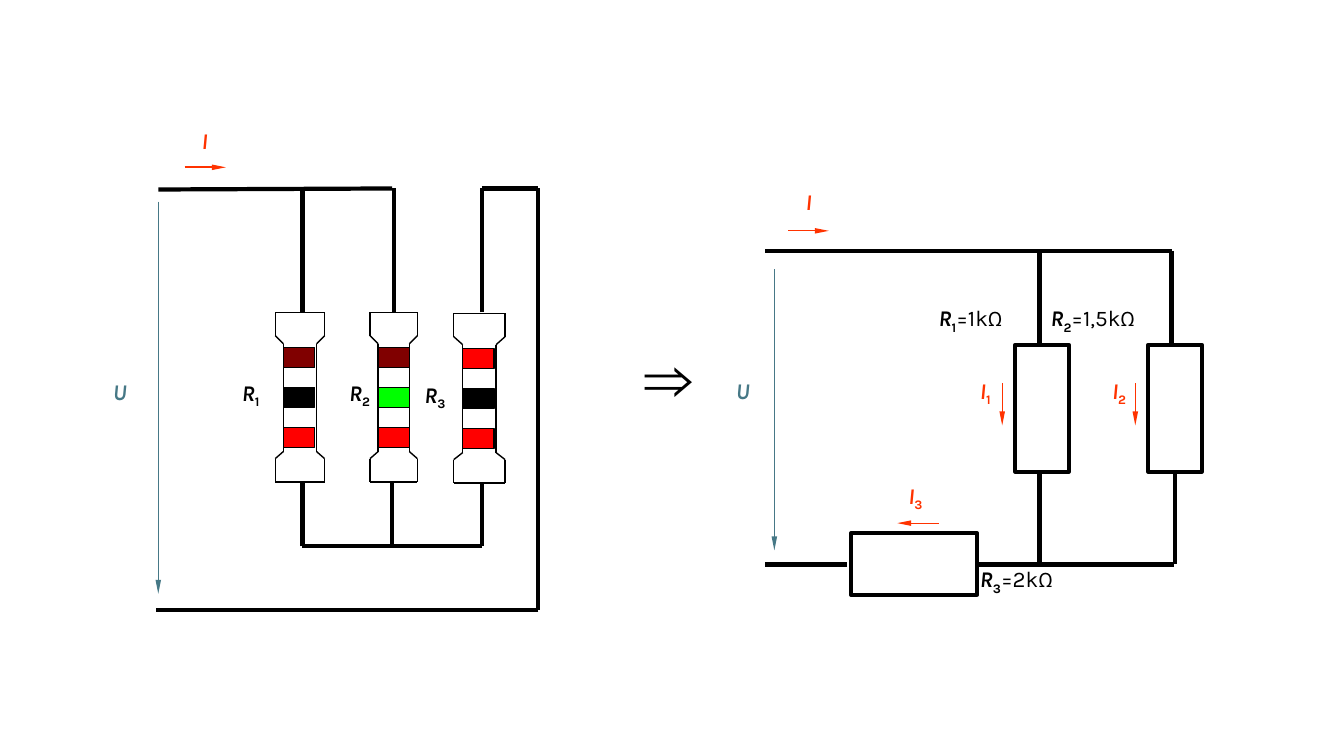
from lxml import etree
from pptx import Presentation
from pptx.dml.color import RGBColor
from pptx.enum.shapes import MSO_CONNECTOR, MSO_SHAPE
from pptx.enum.text import PP_ALIGN as Align
from pptx.oxml.ns import qn
from pptx.util import Pt

PX = 9144  # 100 px to the inch
COLORS = {
    "black": "000000", "teal": "467886", "orange": "FF3300",
    "brown": "800000", "red": "FF0000", "green": "00FF00",
}

deck = Presentation()
deck.slide_width, deck.slide_height = 1333 * PX, 750 * PX
page = deck.slides.add_slide(deck.slide_layouts[6])


def add_line(x1, y1, x2, y2, color="black", weight=3, arrow=False):
    line = page.shapes.add_connector(
        MSO_CONNECTOR.STRAIGHT, x1 * PX, y1 * PX, x2 * PX, y2 * PX)
    line.line.color.rgb = RGBColor.from_string(COLORS[color])
    line.line.width = Pt(weight)
    if arrow:
        etree.SubElement(line.line._get_or_add_ln(), qn("a:tailEnd"),
                         type="triangle", w="sm", len="lg")
    etree.SubElement(line._element.spPr, qn("a:effectLst"))


def add_box(left, top, width, height, weight, fill=None):
    shape = page.shapes.add_shape(
        MSO_SHAPE.RECTANGLE, left * PX, top * PX, width * PX, height * PX)
    shape.shadow.inherit = False
    shape.line.color.rgb = RGBColor.from_string(COLORS["black"])
    shape.line.width = Pt(weight)
    if fill:
        shape.fill.solid()
        shape.fill.fore_color.rgb = RGBColor.from_string(COLORS[fill])
    else:
        shape.fill.background()


# Wires: left circuit, then right circuit
for wire in [
    (389, 187, 157, 188), (534, 605, 155, 605), (300, 542, 478, 542),
    (478, 187, 534, 187), (534, 187, 534, 605),
    (300, 310, 300, 187), (300, 542, 300, 479),
    (391, 310, 391, 187), (389, 542, 389, 479),
    (478, 310, 478, 187), (478, 542, 478, 479),
    (759, 249, 1162, 249), (971, 560, 1164, 560), (840, 560, 759, 560),
    (1031, 249, 1031, 342), (1031, 467, 1031, 560),
    (1162, 249, 1162, 342), (1165, 468, 1165, 560),
]:
    add_line(*wire)

# Voltage and current arrows
for x1, y1, x2, y2, color, weight in [
    (157, 200, 157, 589, "teal", 0.75),
    (183, 166, 224, 166, "orange", 1.5),
    (768, 267, 768, 546, "teal", 0.75),
    (782, 229, 822, 229, "orange", 0.75),
    (994, 380, 994, 422, "orange", 0.75),
    (1126, 380, 1126, 422, "orange", 0.75),
    (931, 519, 890, 519, "orange", 0.75),
]:
    add_line(x1, y1, x2, y2, color, weight, arrow=True)

# Colour-coded resistors: twelve-sided outline and three bands
for left, neck_left, neck_right, right, top, bands in [
    (273, 281, 314, 322, 310, ("brown", "black", "red")),
    (367, 375, 406, 414, 310, ("brown", "green", "red")),
    (450, 459, 492, 501, 311, ("red", "black", "red")),
]:
    corners = [
        (left, 0), (left, 23), (neck_left, 31), (neck_left, 138), (left, 145),
        (left, 168), (right, 168), (right, 145), (neck_right, 138),
        (neck_right, 31), (right, 23), (right, 0),
    ]
    for (x1, y1), (x2, y2) in zip(corners, corners[1:] + corners[:1]):
        add_line(x1, top + y1, x2, top + y2, weight=1)
    for offset, color in zip((35, 74, 114), bands):
        add_box(neck_left, top + offset, 31, 20, 0.75, color)

# Resistor symbols
for symbol in [(1007, 342, 53, 126), (1139, 342, 53, 126), (844, 529, 125, 61)]:
    add_box(*symbol, weight=3)

# Labels: position, letter, subscript, value, colour, alignment
labels = [
    (111, 374, 40, 38, "U", "", "", "teal", Align.LEFT),
    (183, 125, 40, 38, "I", "", "", "orange", Align.CENTER),
    (239, 375, 40, 38, "R", "1", "", "black", Align.LEFT),
    (328, 375, 40, 42, "R", "2", "", "black", Align.RIGHT),
    (420, 377, 40, 38, "R", "3", "", "black", Align.LEFT),
    (638, 332, 85, 87, "", "", "⇒", "black", Align.LEFT),
    (729, 373, 40, 42, "U", "", "", "teal", Align.LEFT),
    (782, 186, 40, 42, "I", "", "", "orange", Align.CENTER),
    (971, 373, 26, 42, "I", "1", "", "orange", Align.LEFT),
    (1102, 373, 33, 56, "I", "2", "", "orange", Align.LEFT),
    (900, 477, 40, 52, "I", "3", "", "orange", Align.LEFT),
    (930, 301, 119, 42, "R", "1", "=1kΩ", "black", Align.LEFT),
    (1041, 301, 148, 34, "R", "2", "=1,5kΩ", "black", Align.LEFT),
    (971, 560, 119, 42, "R", "3", "=2kΩ", "black", Align.LEFT),
]
for left, top, width, height, letter, subscript, value, color, align in labels:
    box = page.shapes.add_textbox(left * PX, top * PX, width * PX, height * PX)
    frame = box.text_frame
    frame.word_wrap = True
    frame.margin_left = frame.margin_right = PX
    frame.margin_top = frame.margin_bottom = PX
    para = frame.paragraphs[0]
    para.alignment = align
    for part, text in (("letter", letter), ("subscript", subscript), ("value", value)):
        if not text:
            continue
        span = para.add_run()
        span.text = text
        font = span.font
        font.name = "Times New Roman" if text == "⇒" else "Karla"
        font.size = Pt(48 if text == "⇒" else 16)
        font.bold = part != "value"
        font.italic = part == "letter"
        font.color.rgb = RGBColor.from_string(COLORS[color])
        if part == "subscript":
            font._element.set("baseline", "-25000")

deck.save("out.pptx")
